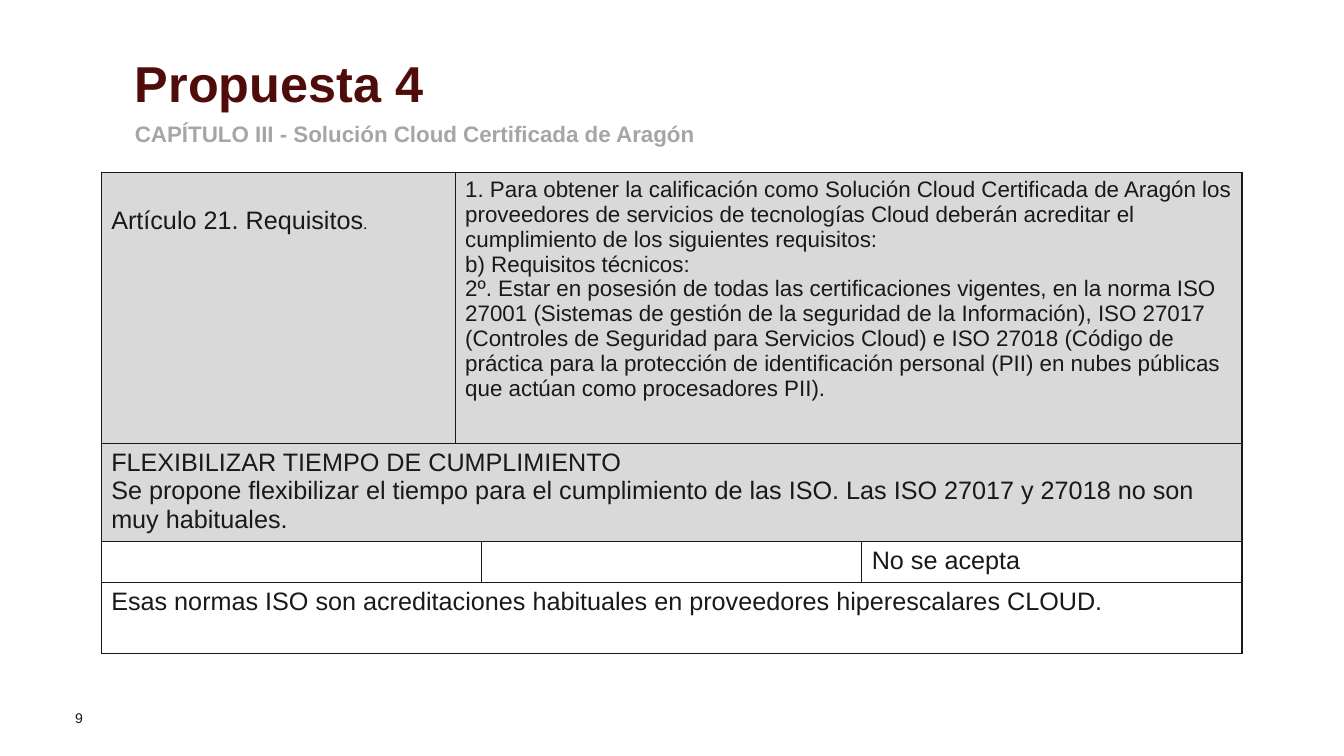
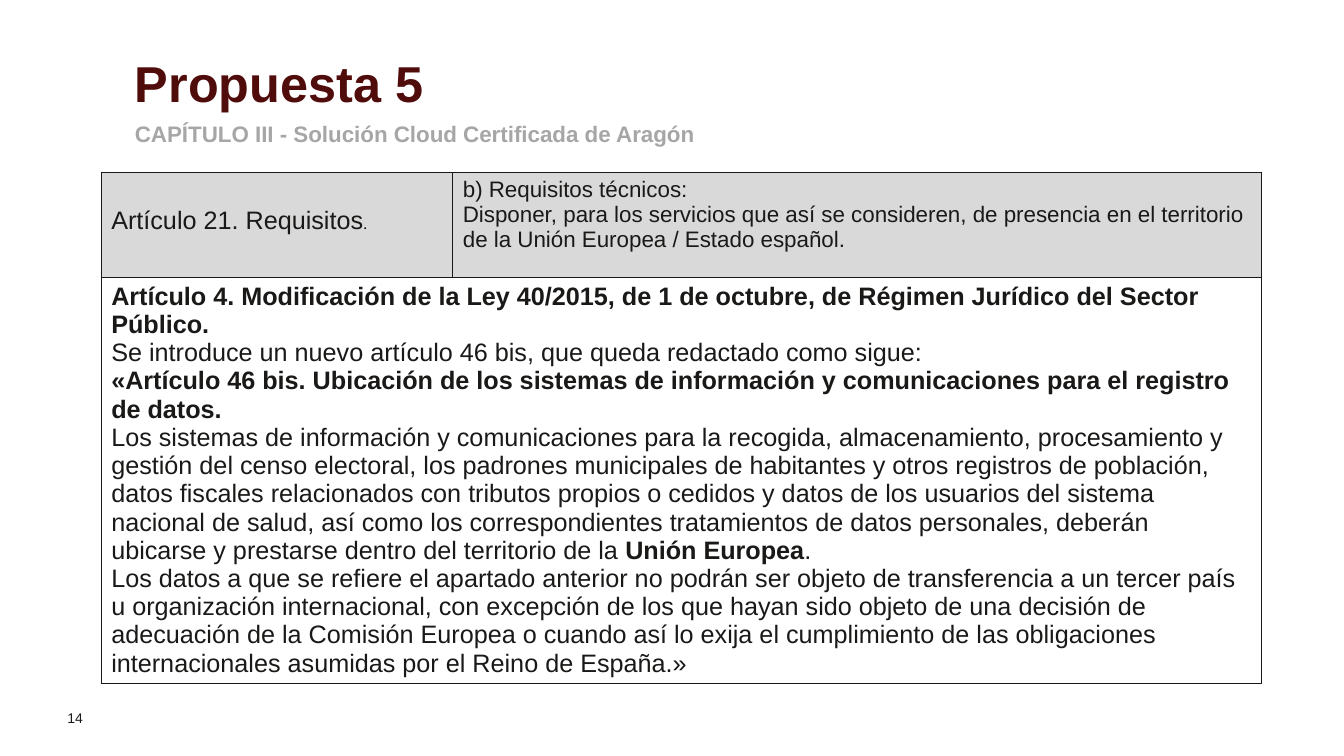
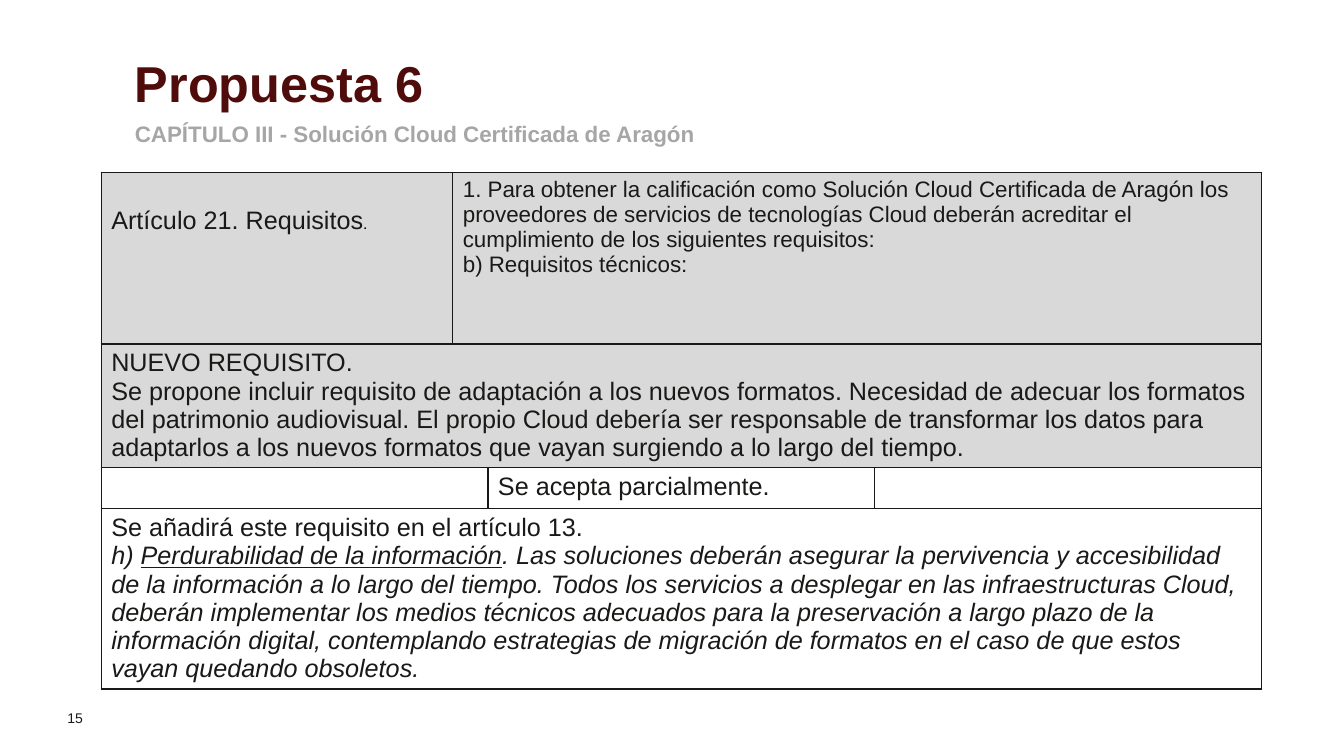
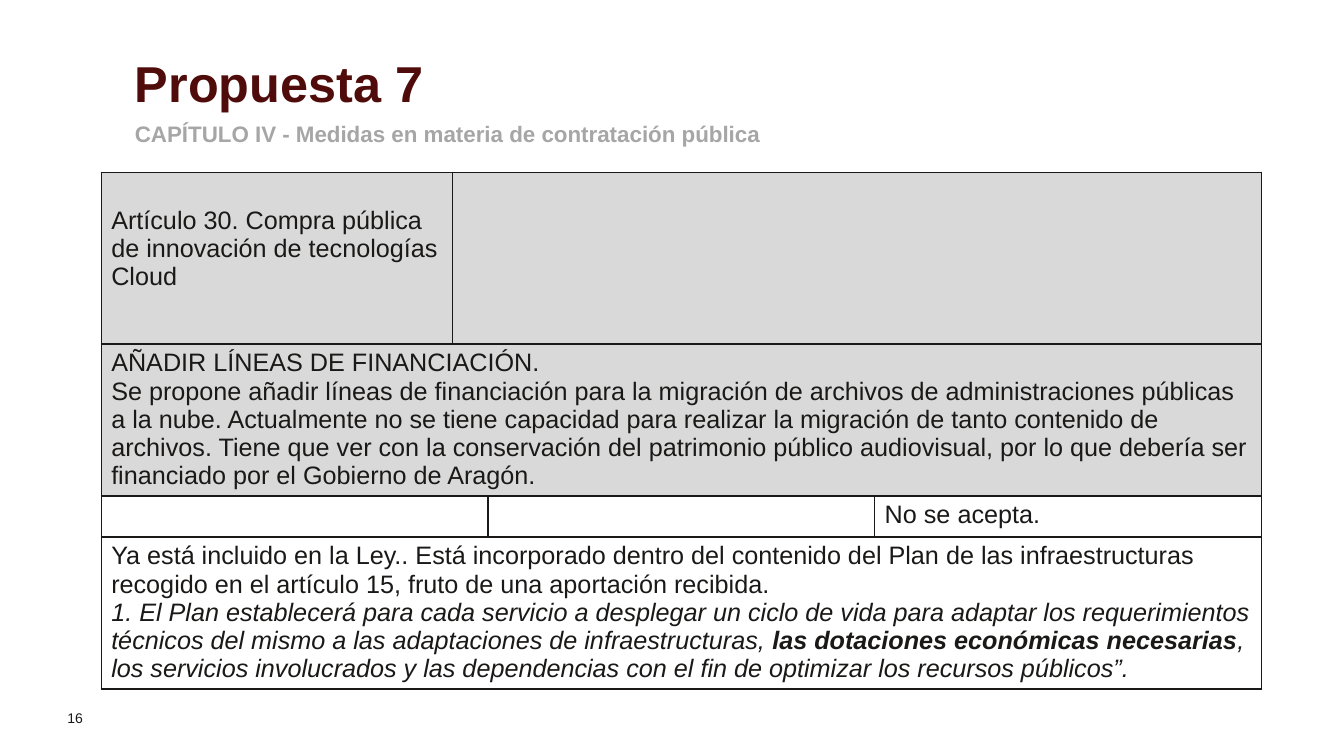
import pptx
import pptx.dml.color
import pptx.enum.text
import pptx.oxml
import pptx.oxml.ns
import pptx.util

Cm, Pt = pptx.util.Cm, pptx.util.Pt
ALIGN = pptx.enum.text.PP_ALIGN
ANCHOR = pptx.enum.text.MSO_ANCHOR

INK, WINE, SILVER, SHADE = "1A1918", "500C0A", "A6A6A6", "D9D9D9"
TITLE = dict(size=Pt(36), bold=True, color=WINE)
CHAPTER = dict(size=Pt(16), bold=True, color=SILVER)
PAGE = dict(size=Pt(10))
LARGE = dict(size=Pt(18))
SMALL = dict(size=Pt(16))
BOLD, ITALIC = dict(bold=True), dict(italic=True)
DOT = (".", dict(size=Pt(11), name="Calibri", color="000000"))
ARTICLE = [("Artículo 21. Requisitos", {}), DOT]
CLOUD = "CAPÍTULO III - Solución Cloud Certificada de Aragón"
INTRO = ("1. Para obtener la calificación como Solución Cloud Certificada de Aragón los "
         "proveedores de servicios de tecnologías Cloud deberán acreditar el cumplimiento "
         "de los siguientes requisitos:")
TECH = "b) Requisitos técnicos:"


def tint(code):
    return pptx.dml.color.RGBColor.from_string(code)


def apply(item, values):
    for key, value in values.items():
        setattr(item, key, value)


def write(frame, paras, style, **layout):
    """Fill a frame; each paragraph is a string or a list of (text, format) runs."""
    for index, para in enumerate(paras):
        line = frame.add_paragraph() if index else frame.paragraphs[0]
        apply(line, layout)
        for text, extra in [(para, {})] if isinstance(para, str) else para:
            run = line.add_run()
            run.text = text
            look = {"name": "Arial", "color": INK, **style, **extra}
            run.font.color.rgb = tint(look.pop("color"))
            apply(run.font, look)


def place(shape, left, top, width, height):
    apply(shape, dict(left=Cm(left), top=Cm(top), width=Cm(width), height=Cm(height)))


def label(shape, box, text, style, inset, anchor=ANCHOR.TOP, **layout):
    place(shape, *box)
    frame = shape.text_frame
    side, edge = inset
    apply(frame, dict(word_wrap=True, auto_size=pptx.enum.text.MSO_AUTO_SIZE.NONE,
                      vertical_anchor=anchor, margin_left=Cm(side), margin_right=Cm(side),
                      margin_top=Cm(edge), margin_bottom=Cm(edge)))
    write(frame, [text], style, **layout)


def border(cell):
    props = cell._tc.get_or_add_tcPr()
    for side in "LRTB":
        props.append(pptx.oxml.parse_xml(
            f'<a:ln{side} {pptx.oxml.ns.nsdecls("a")} w="12700"><a:solidFill>'
            f'<a:srgbClr val="{INK}"/></a:solidFill></a:ln{side}>'))


def thirds(width, head):
    """Three equal columns, the first split after the article heading."""
    part = width / 3
    return [head, part - head, part, part]


def grid(slide, left, top, cols, rows):
    """Each row is (height, fill, cells); each cell is (span, paragraphs, style)."""
    heights = [row[0] for row in rows]
    frame = slide.shapes.add_table(len(rows), len(cols), Cm(left), Cm(top),
                                   Cm(sum(cols)), Cm(sum(heights)))
    table = frame.table
    apply(table, dict(first_row=False, horz_banding=False))
    for col, width in zip(table.columns, cols):
        col.width = Cm(width)
    for index, (height, fill, cells) in enumerate(rows):
        table.rows[index].height = Cm(height)
        for cell in table.rows[index].cells:
            border(cell)
            if fill:
                cell.fill.solid()
                cell.fill.fore_color.rgb = tint(fill)
            else:
                cell.fill.background()
        start = 0
        for span, paras, style in cells:
            cell = table.cell(index, start)
            if span > 1:
                cell.merge(table.cell(index, start + span - 1))
            write(cell.text_frame, paras, style)
            start += span
    return table


def article(height, name, paras, span=3):
    return height, SHADE, [(1, [name], LARGE), (span, paras, SMALL)]


def full(height, paras, fill=None, span=4):
    return height, fill, [(span, paras, LARGE)]


def verdict(*texts):
    return 0.99, None, [(span, [text] if text else [], LARGE)
                        for span, text in zip((2, 1, 1), texts)]


def proposal(deck, page, number, chapter, cols, rows):
    slide = deck.slides.add_slide(deck.slide_layouts[5])
    shapes = slide.shapes
    box = shapes.add_textbox(0, 0, 0, 0)
    label(box, (0, 17.6, 2.34, 1), str(page), PAGE, (0.25, 0.13), ANCHOR.MIDDLE,
          alignment=ALIGN.RIGHT)
    label(shapes.title, (3.4, 1.35, 27, 1.65), f"Propuesta {number}", TITLE, (0, 0.13),
          alignment=ALIGN.LEFT, line_spacing=0.9)
    box = shapes.add_textbox(0, 0, 0, 0)
    label(box, (3.4, 3, 27, 2), chapter, CHAPTER, (0, 0.1), line_spacing=0.9)
    table = grid(slide, 2.55, 4.34, cols, rows)
    table.cell(0, 0).margin_top = Cm(0.86)


def main():
    deck = pptx.Presentation()
    apply(deck, dict(slide_width=Cm(33.87), slide_height=Cm(19.05)))
    wide = thirds(29.24, 8.86)

    proposal(deck, 9, 4, CLOUD, thirds(28.75, 8.92), [
        article(6.84, ARTICLE, [
            INTRO, TECH,
            "2º. Estar en posesión de todas las certificaciones vigentes, en la norma ISO "
            "27001 (Sistemas de gestión de la seguridad de la Información), ISO 27017 "
            "(Controles de Seguridad para Servicios Cloud) e ISO 27018 (Código de práctica "
            "para la protección de identificación personal (PII) en nubes públicas que "
            "actúan como procesadores PII)."]),
        full(2.46, [
            "FLEXIBILIZAR TIEMPO DE CUMPLIMIENTO",
            "Se propone flexibilizar el tiempo para el cumplimiento de las ISO. Las ISO "
            "27017 y 27018 no son muy habituales."], SHADE),
        verdict("", "", "No se acepta"),
        full(1.79, ["Esas normas ISO son acreditaciones habituales en proveedores "
                    "hiperescalares CLOUD."])])

    proposal(deck, 14, 5, CLOUD, [8.86, 20.38], [
        article(2.65, ARTICLE, [
            TECH,
            "Disponer, para los servicios que así se consideren, de presencia en el "
            "territorio de la Unión Europea / Estado español."], 1),
        full(10.24, [
            [("Artículo 4. Modificación de la Ley 40/2015, de 1 de octubre, de Régimen "
              "Jurídico del Sector Público.", BOLD)],
            "Se introduce un nuevo artículo 46 bis, que queda redactado como sigue:",
            [("«Artículo 46 bis. Ubicación de los sistemas de información y comunicaciones "
              "para el registro de datos.", BOLD)],
            [("Los sistemas de información y comunicaciones para la recogida, "
              "almacenamiento, procesamiento y gestión del censo electoral, los padrones "
              "municipales de habitantes y otros registros de población, datos fiscales "
              "relacionados con tributos propios o cedidos y datos de los usuarios del "
              "sistema nacional de salud, así como los correspondientes tratamientos de "
              "datos personales, deberán ubicarse y prestarse dentro del territorio de la ",
              {}), ("Unión Europea", BOLD), (".", {})],
            "Los datos a que se refiere el apartado anterior no podrán ser objeto de "
            "transferencia a un tercer país u organización internacional, con excepción de "
            "los que hayan sido objeto de una decisión de adecuación de la Comisión Europea "
            "o cuando así lo exija el cumplimiento de las obligaciones internacionales "
            "asumidas por el Reino de España.»"], span=2)])

    proposal(deck, 15, 6, CLOUD, wide, [
        article(4.33, ARTICLE, [INTRO, TECH]),
        full(3.12, [
            "NUEVO REQUISITO.",
            "Se propone incluir requisito de adaptación a los nuevos formatos. Necesidad de "
            "adecuar los formatos del patrimonio audiovisual. El propio Cloud debería ser "
            "responsable de transformar los datos para adaptarlos a los nuevos formatos que "
            "vayan surgiendo a lo largo del tiempo."], SHADE),
        verdict("", "Se acepta parcialmente.", ""),
        full(4.54, [
            "Se añadirá este requisito en el artículo 13.",
            [("h) ", ITALIC),
             ("Perdurabilidad de la información", dict(italic=True, underline=True)),
             (". Las soluciones deberán asegurar la pervivencia y accesibilidad de la "
              "información a lo largo del tiempo. Todos los servicios a desplegar en las "
              "infraestructuras Cloud, deberán implementar los medios técnicos adecuados "
              "para la preservación a largo plazo de la información digital, contemplando "
              "estrategias de migración de formatos en el caso de que estos vayan quedando "
              "obsoletos.", ITALIC)]])])

    proposal(deck, 16, 7, "CAPÍTULO IV - Medidas en materia de contratación pública", wide, [
        article(4.33, "Artículo 30. Compra pública de innovación de tecnologías Cloud", []),
        full(3.83, [
            "AÑADIR LÍNEAS DE FINANCIACIÓN.",
            "Se propone añadir líneas de financiación para la migración de archivos de "
            "administraciones públicas a la nube. Actualmente no se tiene capacidad para "
            "realizar la migración de tanto contenido de archivos. Tiene que ver con la "
            "conservación del patrimonio público audiovisual, por lo que debería ser "
            "financiado por el Gobierno de Aragón."], SHADE),
        verdict("", "", "No se acepta."),
        full(3.83, [
            "Ya está incluido en la Ley.. Está incorporado dentro del contenido del Plan de "
            "las infraestructuras recogido en el artículo 15, fruto de una aportación "
            "recibida.",
            [("1. El Plan establecerá para cada servicio a desplegar un ciclo de vida para "
              "adaptar los requerimientos técnicos del mismo a las adaptaciones de "
              "infraestructuras, ", ITALIC),
             ("las dotaciones económicas necesarias", dict(bold=True, italic=True)),
             (", los servicios involucrados y las dependencias con el fin de optimizar los "
              "recursos públicos”.", ITALIC)]])])

    deck.save("out.pptx")


if __name__ == "__main__":
    main()
